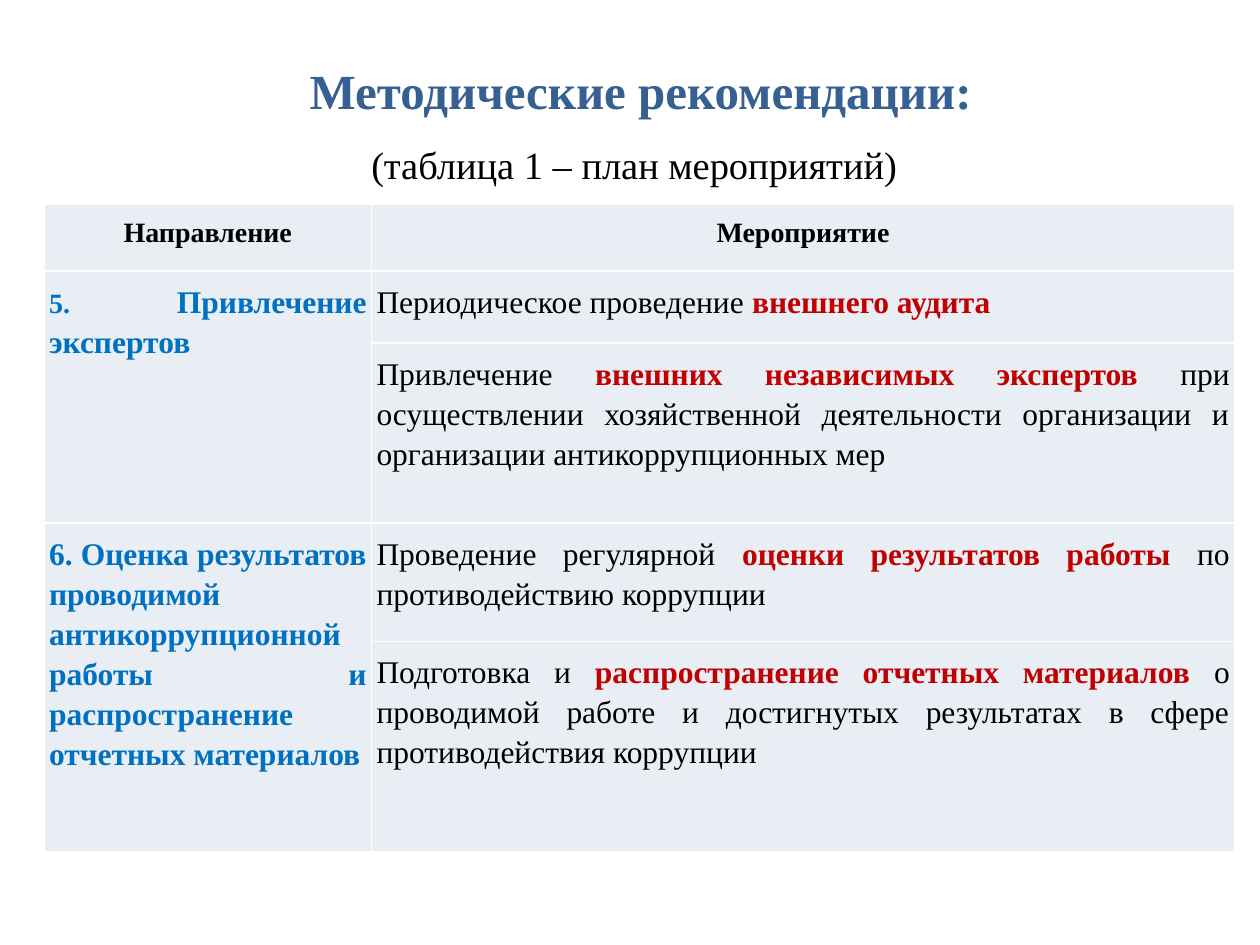
from lxml import etree
from pptx import Presentation
from pptx import util as u
from pptx.dml.color import RGBColor
from pptx.enum import text
from pptx.oxml.ns import qn

COLORS = {
    "title": "376092",
    "body": "000000",
    "direction": "0070C0",
    "accent": "C00000",
    "cell": "E9EDF4",
    "border": "FFFFFF",
}
COLUMN_WIDTHS = [6.6, 17.4]
ROW_HEIGHTS = [1.35, 1.45, 3.63, 2.39, 4.24]
HEADERS = ["Направление", "Мероприятие"]
SECTIONS = [
    (
        [("5. ", 16), ("Привлечение экспертов", 18)],
        [
            ("Периодическое проведение ", "внешнего аудита", ""),
            (
                "Привлечение ",
                "внешних независимых экспертов ",
                "при осуществлении хозяйственной деятельности организации "
                "и организации антикоррупционных мер",
            ),
        ],
    ),
    (
        [
            (
                "6. Оценка результатов проводимой антикоррупционной работы "
                "и распространение отчетных материалов",
                18,
            )
        ],
        [
            (
                "Проведение регулярной ",
                "оценки результатов работы ",
                "по противодействию коррупции",
            ),
            (
                "Подготовка и ",
                "распространение отчетных материалов ",
                "о проводимой работе и достигнутых результатах "
                "в сфере противодействия коррупции",
            ),
        ],
    ),
]


class SlideBuilder:
    """Hold the style and the current slide, and add each kind of element."""

    font = "Times New Roman"
    line_spacing = 1.15

    def __init__(self, presentation):
        self.slide = presentation.slides.add_slide(presentation.slide_layouts[6])

    def run(self, paragraph, content, size, color, bold=False):
        run = paragraph.add_run()
        run.text = content
        run.font.name = self.font
        run.font.size = u.Pt(size)
        run.font.bold = bold
        run.font.color.rgb = RGBColor.from_string(COLORS[color])

    def textbox(self, box, anchor, content, size, color, bold=False, before=0):
        shape = self.slide.shapes.add_textbox(*map(u.Cm, box))
        frame = shape.text_frame
        frame.word_wrap = True
        frame.vertical_anchor = anchor
        paragraph = frame.paragraphs[0]
        paragraph.alignment = text.PP_ALIGN.CENTER
        paragraph.space_before = u.Pt(before)
        self.run(paragraph, content, size, color, bold)

    def table(self, left, top, widths, heights):
        shape = self.slide.shapes.add_table(
            len(heights), len(widths),
            u.Cm(left), u.Cm(top), u.Cm(sum(widths)), u.Cm(sum(heights)),
        )
        table = shape.table
        for column, width in zip(table.columns, widths):
            column.width = u.Cm(width)
        for row, height in zip(table.rows, heights):
            row.height = u.Cm(height)
        for cell in table.iter_cells():
            self.format_cell(cell)
        return table

    def format_cell(self, cell):
        cell.margin_left = cell.margin_right = u.Cm(0.1)
        cell.margin_top = cell.margin_bottom = u.Cm(0.18)
        cell.fill.solid()
        cell.fill.fore_color.rgb = RGBColor.from_string(COLORS["cell"])
        properties = cell._tc.get_or_add_tcPr()
        for position, side in enumerate(("a:lnL", "a:lnR", "a:lnT", "a:lnB")):
            line = etree.Element(qn(side), w=str(u.Pt(1)))
            fill = etree.SubElement(line, qn("a:solidFill"))
            etree.SubElement(fill, qn("a:srgbClr"), val=COLORS["border"])
            properties.insert(position, line)

    def cell_text(self, cell, alignment, runs):
        paragraph = cell.text_frame.paragraphs[0]
        paragraph.alignment = alignment
        paragraph.line_spacing = self.line_spacing
        for content, size, color, bold in runs:
            if content:
                self.run(paragraph, content, size, color, bold)


def main():
    presentation = Presentation()
    presentation.slide_width = u.Cm(25.4)
    presentation.slide_height = u.Cm(19.05)
    builder = SlideBuilder(presentation)

    builder.textbox(
        (0.71, 0.91, 24.41, 1.8), text.MSO_ANCHOR.MIDDLE,
        "Методические рекомендации:", 28, "title", bold=True,
    )
    builder.textbox(
        (1.09, 2.72, 23.39, 15.39), text.MSO_ANCHOR.TOP,
        "(таблица 1 – план мероприятий)", 22, "body", before=4.4,
    )

    table = builder.table(0.89, 4.11, COLUMN_WIDTHS, ROW_HEIGHTS)
    for column, header in enumerate(HEADERS):
        builder.cell_text(
            table.cell(0, column), text.PP_ALIGN.CENTER, [(header, 16, "body", True)]
        )

    row = 1
    for direction, measures in SECTIONS:
        heading = table.cell(row, 0)
        heading.merge(table.cell(row + len(measures) - 1, 0))
        builder.cell_text(
            heading, text.PP_ALIGN.JUSTIFY,
            [(content, size, "direction", True) for content, size in direction],
        )
        for start, accent, end in measures:
            builder.cell_text(
                table.cell(row, 1), text.PP_ALIGN.JUSTIFY,
                [
                    (start, 18, "body", False),
                    (accent, 18, "accent", True),
                    (end, 18, "body", False),
                ],
            )
            row += 1

    presentation.save("out.pptx")


if __name__ == "__main__":
    main()
